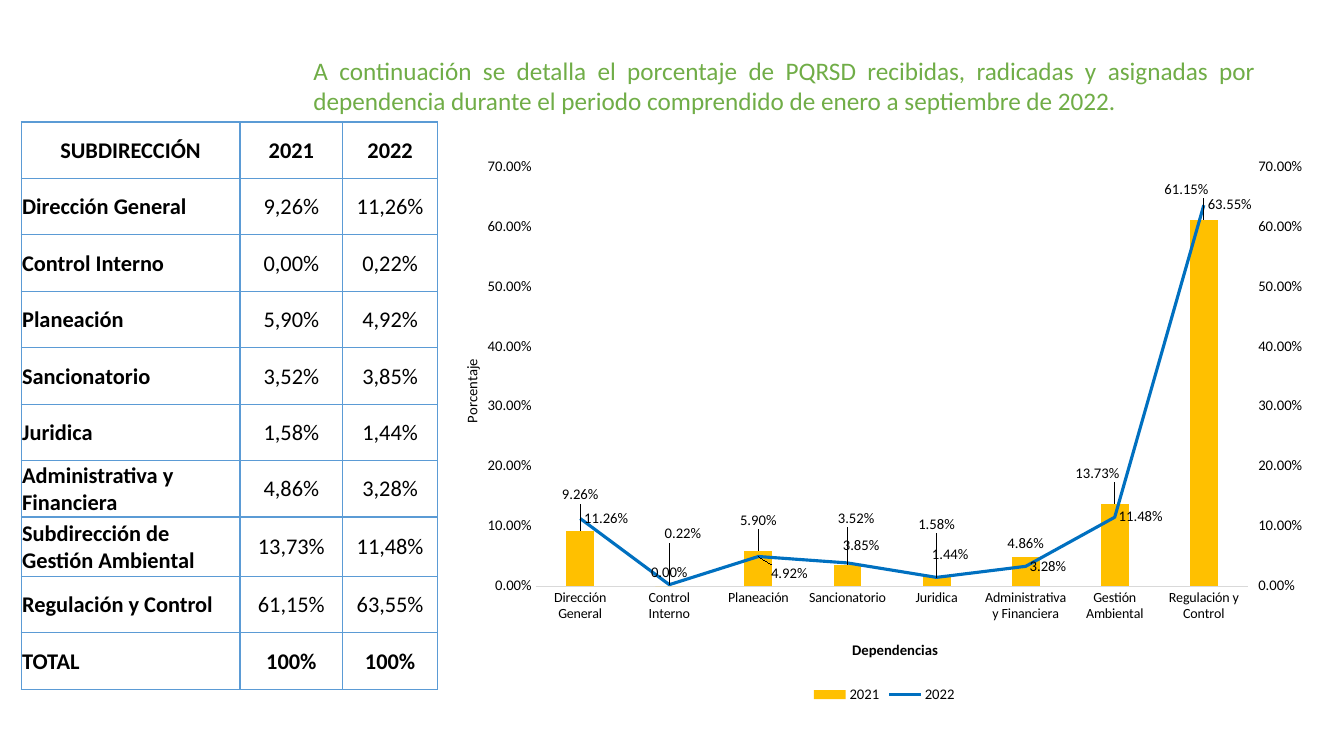
from pptx import Presentation
from pptx.chart.axis import ValueAxis
from pptx.chart.data import CategoryChartData
from pptx.dml.color import RGBColor
from pptx.enum import chart as ch, text
from pptx.oxml import parse_xml
from pptx.oxml.ns import nsdecls, qn
from pptx.util import Inches, Pt

GREEN = RGBColor(0x70, 0xAD, 0x47)
BLACK = RGBColor(0, 0, 0)
BORDER_BLUE = RGBColor(0x5B, 0x9B, 0xD5)
YELLOW = RGBColor(0xFF, 0xC0, 0x00)
LINE_BLUE = RGBColor(0x00, 0x70, 0xC0)
AXIS_GREY = RGBColor(0xD9, 0xD9, 0xD9)

INTRO = ("A continuación se detalla el porcentaje de PQRSD recibidas, radicadas y asignadas "
         "por dependencia durante el periodo comprendido de enero a septiembre de 2022.")
# Table name, chart category, 2021 and 2022 percentages
DEPARTMENTS = [
    ("Dirección General", "Dirección General", 9.26, 11.26),
    ("Control Interno", "Control Interno", 0, 0.22),
    ("Planeación", "Planeación", 5.90, 4.92),
    ("Sancionatorio", "Sancionatorio", 3.52, 3.85),
    ("Juridica", "Juridica", 1.58, 1.44),
    ("Administrativa y Financiera", "Administrativa y Financiera", 4.86, 3.28),
    ("Subdirección de Gestión Ambiental", "Gestión Ambiental", 13.73, 11.48),
    ("Regulación y Control", "Regulación y Control", 61.15, 63.55),
]
# Label shifts by point, as fractions of the chart
SHIFTS_2021 = {0: (0, -0.04), 2: (0, -0.03), 3: (0.01, -0.06), 4: (0, -0.07),
               6: (-0.02, -0.03), 7: (-0.02, -0.03)}
SHIFTS_2022 = {1: (-0.01, -0.09), 2: (0.01, 0.03), 3: (-0.01, -0.03), 4: (-0.01, -0.04)}


def style_font(font, size=10.5, color=BLACK, bold=False):
    font.name, font.size, font.bold = "Calibri", Pt(size), bold
    font.color.rgb = color


def write(frame, content, align=text.PP_ALIGN.CENTER, **font_format):
    paragraph = frame.paragraphs[0]
    paragraph.alignment = align
    run = paragraph.add_run()
    run.text = content
    style_font(run.font, **font_format)


def add_intro(slide, left, top, width, height):
    intro = slide.shapes.add_textbox(*map(Inches, (left, top, width, height))).text_frame
    intro.word_wrap = True
    intro.auto_size = text.MSO_AUTO_SIZE.SHAPE_TO_FIT_TEXT
    write(intro, INTRO, align=text.PP_ALIGN.JUSTIFY, size=18, color=GREEN)


# Table
def border_cell(cell):
    properties = cell._tc.get_or_add_tcPr()
    for position, side in enumerate(("lnL", "lnR", "lnT", "lnB")):
        properties.insert(position, parse_xml(
            f'<a:{side} {nsdecls("a")} w="12700"><a:solidFill>'
            f'<a:srgbClr val="{BORDER_BLUE}"/></a:solidFill></a:{side}>'))


def add_percentage_table(slide, left, top, widths, row_height):
    def percent(value):
        return f"{value:.2f}%".replace(".", ",")

    rows = [("SUBDIRECCIÓN", "2021", "2022")]
    rows += [(name, percent(old), percent(new)) for name, _, old, new in DEPARTMENTS]
    rows.append(("TOTAL", "100%", "100%"))
    table = slide.shapes.add_table(
        len(rows), len(widths), Inches(left), Inches(top),
        Inches(sum(widths)), Inches(row_height * len(rows))).table
    for column, width in zip(table.columns, widths):
        column.width = Inches(width)
    for r, values in enumerate(rows):
        table.rows[r].height = Inches(row_height)
        for c, value in enumerate(values):
            cell = table.cell(r, c)
            cell.fill.background()
            border_cell(cell)
            cell.vertical_anchor = text.MSO_ANCHOR.MIDDLE
            cell.margin_left = cell.margin_right = cell.margin_top = Inches(0.01)
            cell.margin_bottom = 0
            is_name = c == 0 and r > 0
            write(cell.text_frame, value, size=16,
                  bold=c == 0 or r in (0, len(rows) - 1),
                  align=text.PP_ALIGN.LEFT if is_name else text.PP_ALIGN.CENTER)
    table.rows[7].height = Inches(0.59)  # two-line name


# Chart
def place(parent, index, x, y, size=None, edge=True):
    """Give a chart part a manual layout in fractions of the chart."""
    for old in parent.findall(qn("c:layout")):
        parent.remove(old)
    parts = [("xMode", "edge"), ("yMode", "edge")] if edge else []
    parts += [("x", x), ("y", y)]
    if size:
        parts = [("layoutTarget", "inner")] + parts + [("w", size[0]), ("h", size[1])]
    body = "".join(f'<c:{tag} val="{value}"/>' for tag, value in parts)
    parent.insert(index, parse_xml(
        f'<c:layout {nsdecls("c")}><c:manualLayout>{body}</c:manualLayout></c:layout>'))


def move_to_line(chart, left_axis):
    """Turn the second series into a line on a right axis, which is returned."""
    bars = chart.plots[0]._element
    series = bars.findall(qn("c:ser"))[1]
    for flag in series.findall(qn("c:invertIfNegative")):
        series.remove(flag)
    line_chart = parse_xml(
        f'<c:lineChart {nsdecls("c")}><c:grouping val="standard"/><c:varyColors val="0"/>'
        '<c:marker val="1"/><c:axId val="5001"/><c:axId val="5002"/></c:lineChart>')
    line_chart.insert(2, series)
    bars.addnext(line_chart)
    last = left_axis._element
    for kind, own, other, hidden, side, crosses in (
            ("valAx", 5002, 5001, 0, "r", "max"), ("catAx", 5001, 5002, 1, "b", "autoZero")):
        axis = parse_xml(
            f'<c:{kind} {nsdecls("c")}><c:axId val="{own}"/>'
            '<c:scaling><c:orientation val="minMax"/></c:scaling>'
            f'<c:delete val="{hidden}"/><c:axPos val="{side}"/>'
            '<c:majorTickMark val="out"/><c:minorTickMark val="none"/>'
            f'<c:tickLblPos val="nextTo"/><c:crossAx val="{other}"/>'
            f'<c:crosses val="{crosses}"/></c:{kind}>')
        last.addnext(axis)
        last = axis
    return ValueAxis(left_axis._element.getnext())


def label_series(series, position, shifts):
    labels = series.data_labels
    labels.show_value = True
    labels.number_format, labels.number_format_is_linked = "0.00%", False
    labels.position = position
    style_font(labels.font)
    for point, (dx, dy) in shifts.items():
        label = series.points[point].data_label
        style_font(label.font)
        label.position = position
        place(label._get_or_add_dLbl(), 1, dx, dy, edge=False)


def add_department_chart(slide, left, top, width, height):
    data = CategoryChartData(number_format="0.00%")
    data.categories = [row[1] for row in DEPARTMENTS]
    for year, column in (("2021", 2), ("2022", 3)):
        data.add_series(year, [round(row[column] / 100, 4) for row in DEPARTMENTS])
    chart = slide.shapes.add_chart(
        ch.XL_CHART_TYPE.COLUMN_CLUSTERED, *map(Inches, (left, top, width, height)), data).chart
    style_font(chart.font)
    chart.has_title = False
    left_axis = chart.value_axis
    right_axis = move_to_line(chart, left_axis)
    place(chart.plots[0]._element.getparent(), 0, 0.098, 0.038, size=(0.822, 0.746))

    # Axes and their titles
    for axis in (left_axis, right_axis):
        axis.minimum_scale, axis.maximum_scale, axis.major_unit = 0, 0.7, 0.1
        axis.has_major_gridlines = False
        axis.format.line.fill.background()
        axis.tick_labels.number_format = "0.00%"
        axis.tick_labels.number_format_is_linked = False
        style_font(axis.tick_labels.font)
    left_axis.major_tick_mark = ch.XL_TICK_MARK.NONE
    departments = chart.category_axis
    departments.major_tick_mark = ch.XL_TICK_MARK.NONE
    departments.format.line.color.rgb = AXIS_GREY
    departments.format.line.width = Pt(0.75)
    style_font(departments.tick_labels.font, size=10)
    for axis, caption, bold, x, y in ((departments, "Dependencias", True, 0.46, 0.875),
                                      (left_axis, "Porcentaje", False, 0.01, 0.375)):
        title = axis.axis_title
        write(title.text_frame, caption, bold=bold)
        place(title._element, 1, x, y)
    left_axis.axis_title.text_frame._txBody.bodyPr.set("rot", "-5400000")

    # Columns for 2021, line for 2022
    columns, lines = chart.plots
    columns.gap_width, columns.overlap = 219, -27
    columns.vary_by_categories = False
    year_2021, year_2022 = columns.series[0], lines.series[0]
    year_2021.format.fill.solid()
    year_2021.format.fill.fore_color.rgb = YELLOW
    year_2022.format.line.color.rgb = LINE_BLUE
    year_2022.format.line.width = Pt(2.25)
    year_2022.marker.style = ch.XL_MARKER_STYLE.NONE
    year_2022.smooth = False
    label_series(year_2021, ch.XL_LABEL_POSITION.OUTSIDE_END, SHIFTS_2021)
    label_series(year_2022, ch.XL_LABEL_POSITION.RIGHT, SHIFTS_2022)

    chart.has_legend = True
    chart.legend.position = ch.XL_LEGEND_POSITION.BOTTOM
    chart.legend.include_in_layout = False
    style_font(chart.legend.font)


def main():
    deck = Presentation()
    deck.slide_width, deck.slide_height = Inches(13.33), Inches(7.5)
    slide = deck.slides.add_slide(deck.slide_layouts[6])
    add_intro(slide, 3.01, 0.5, 9.54, 0.71)
    add_percentage_table(slide, 0.21, 1.21, (2.17, 1.02, 0.94), 0.56)
    add_department_chart(slide, 4.47, 1.44, 8.6, 5.58)
    deck.save("out.pptx")


if __name__ == "__main__":
    main()
